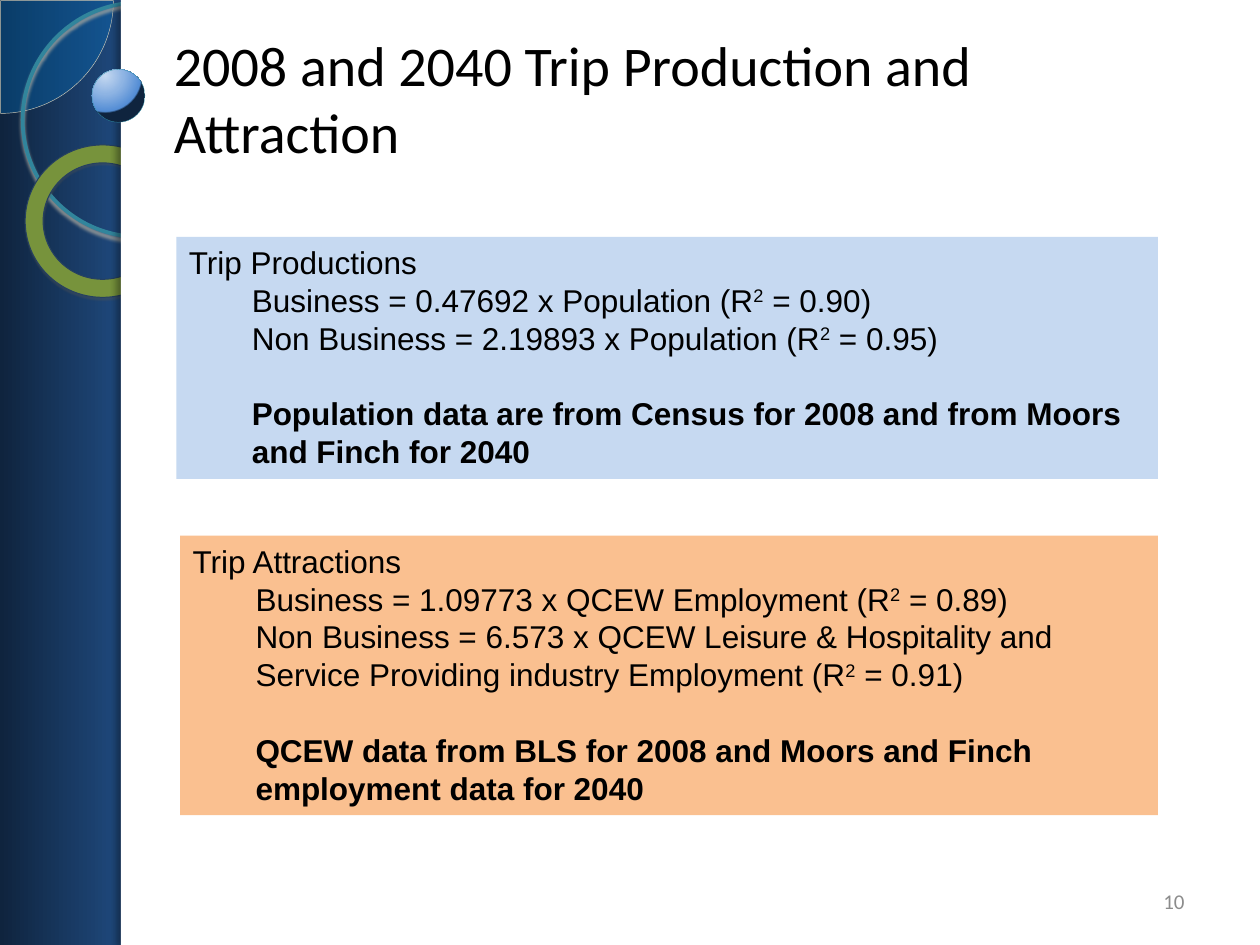
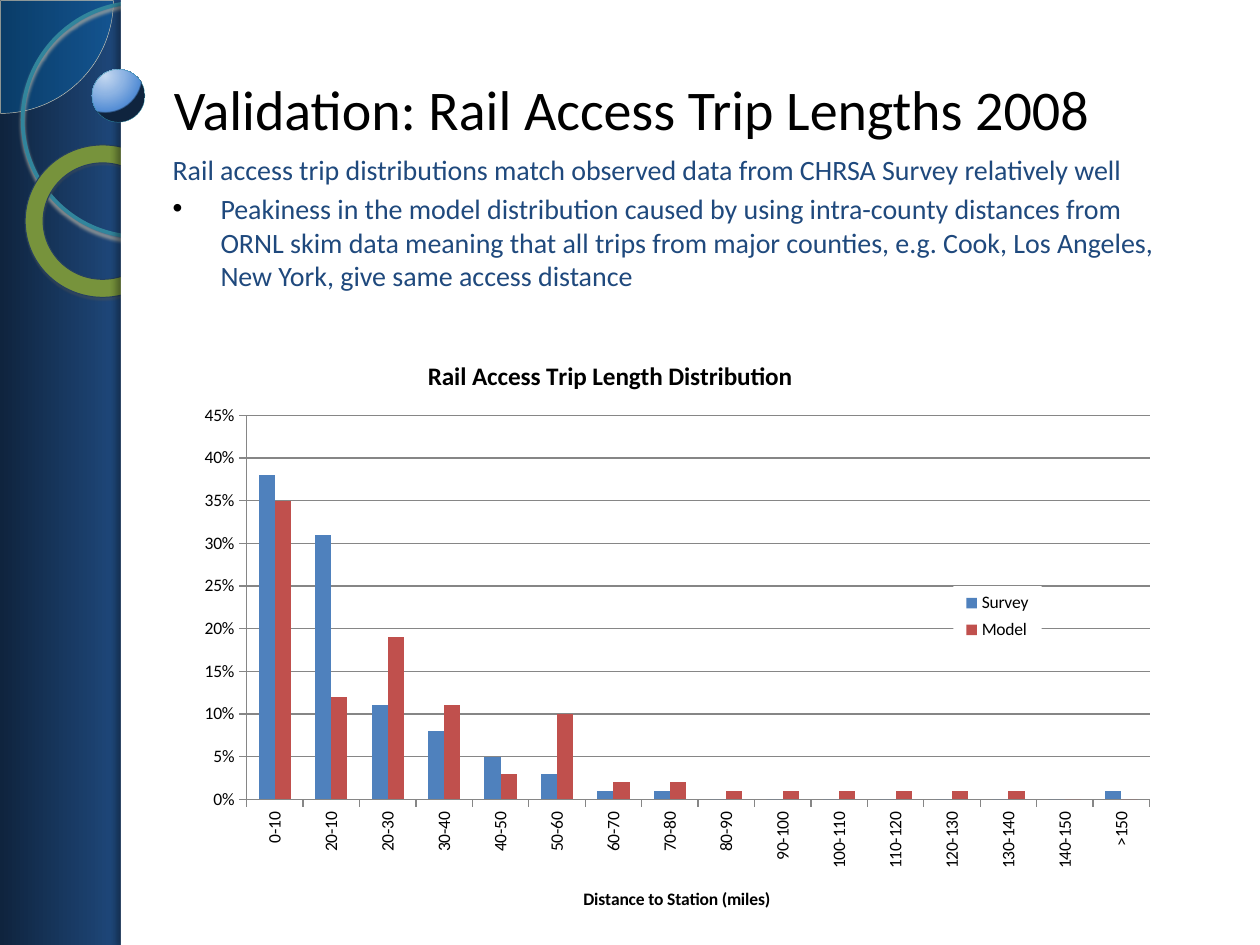
from lxml.etree import SubElement
from pptx import Presentation
from pptx.chart.data import CategoryChartData
from pptx.dml.color import RGBColor
from pptx.enum.chart import XL_CHART_TYPE as ChartType, XL_LEGEND_POSITION as LegendSide
from pptx.enum.chart import XL_TICK_MARK as Tick
from pptx.enum.shapes import MSO_SHAPE as Preset
from pptx.enum.text import MSO_ANCHOR as Anchor, MSO_AUTO_SIZE as AutoSize, PP_ALIGN as Align
from pptx.oxml import parse_xml
from pptx.oxml.ns import nsdecls, qn
from pptx.util import Inches, Pt

SLIDE_WIDTH, SLIDE_HEIGHT = Inches(10), Inches(7.5)
COLUMN, ROW = SLIDE_WIDTH / 100, SLIDE_HEIGHT / 75
BLACK, WHITE, NAVY, DARK_NAVY = "000000", "FFFFFF", "1F497D", "0F243E"
PALE_BLUE, ORANGE, GRAY, GRID_GRAY = "C6D9F1", "FAC090", "8C8C8C", "868686"
TITLE_FORMAT = {"name": "Calibri", "size": Pt(32), "color": BLACK}
BODY_FORMAT = {"name": "Calibri", "size": Pt(16), "color": NAVY}
NUMBER_FORMAT = {"name": "Calibri", "size": Pt(12), "color": GRAY}
MODEL_FORMAT = {"name": "Arial", "size": Pt(18), "color": BLACK}
CHART_FORMAT = {"name": "Calibri", "size": Pt(10), "color": BLACK}
MODEL_PITCH = Pt(21.6)

DISTANCES = [
    "0-10", "20-10", "20-30", "30-40", "40-50", "50-60", "60-70", "70-80",
    "80-90", "90-100", "100-110", "110-120", "120-130", "130-140", "140-150", ">150",
]
TRIP_SHARES = {
    "Survey": ("4F81BD", [0.38, 0.31, 0.11, 0.08, 0.05, 0.03, 0.01, 0.01,
                          0, 0, 0, 0, 0, 0, 0, 0.01]),
    "Model": ("C0504D", [0.35, 0.12, 0.19, 0.11, 0.03, 0.1, 0.02, 0.02,
                         0.01, 0.01, 0.01, 0.01, 0.01, 0.01, 0, 0]),
}


def color(hex_text):
    return RGBColor.from_string(hex_text)


def grid(column, row, columns, rows):
    return [round(value) for value in
            (column * COLUMN, row * ROW, columns * COLUMN, rows * ROW)]


def set_values(target, values):
    for name, value in values.items():
        setattr(target, name, value)


def format_font(font, values):
    for name, value in values.items():
        if name == "color":
            font.color.rgb = color(value)
        else:
            setattr(font, name, value)


def move(shape, cells):
    set_values(shape, dict(zip(("left", "top", "width", "height"), grid(*cells))))


def set_fill(fill, hex_text):
    fill.solid()
    fill.fore_color.rgb = color(hex_text)


def add_span(para, text, values):
    span = para.add_run()
    span.text = text
    format_font(span.font, values)
    return span


def add_box(slide, preset, cells, fill=None, line=None, shadow=None):
    box = slide.shapes.add_shape(preset, *grid(*cells))
    box.shadow.inherit = False
    if fill:
        set_fill(box.fill, fill)
    else:
        box.fill.background()
    if line:
        box.line.color.rgb = color(line[0])
        box.line.width = Pt(line[1])
    else:
        box.line.fill.background()
    if shadow:
        add_shadow(box, *shadow)
    return box


def add_shadow(box, hex_text, alpha, blur, distance, angle):
    effects = box.element.spPr.find(qn("a:effectLst"))
    outer = SubElement(effects, qn("a:outerShdw"), blurRad=str(Pt(blur)),
                       dist=str(Pt(distance)), dir=str(angle * 60000),
                       algn="ctr", rotWithShape="0")
    tint = SubElement(outer, qn("a:srgbClr"), val=hex_text)
    SubElement(tint, qn("a:alpha"), val=str(alpha * 1000))


def set_gradient(box, stops, direction):
    colors = "".join(f'<a:gs pos="{position * 1000}"><a:srgbClr val="{hex_text}"/></a:gs>'
                     for position, hex_text in stops)
    gradient = parse_xml(f'<a:gradFill {nsdecls("a")} rotWithShape="1">'
                         f'<a:gsLst>{colors}</a:gsLst>{direction}</a:gradFill>')
    properties = box.element.spPr
    properties.replace(properties.find(qn("a:noFill")), gradient)


def add_master_art(deck, slide):
    band = add_box(slide, Preset.RECTANGLE, (0, 0, 9.7, 75))
    set_gradient(band, [(0, DARK_NAVY), (100, NAVY)], '<a:lin ang="0" scaled="0"/>')

    quarter = add_box(slide, Preset.PIE, (-8.9, -8.9, 17.9, 17.9), "0070C0", ("D1CEBB", 0.25))
    quarter.adjustments[0], quarter.adjustments[1] = 0, 54
    tint = quarter.element.spPr.find(qn("a:solidFill"))[0]
    SubElement(tint, qn("a:alpha"), val="33000")

    circle = add_box(slide, Preset.OVAL, (1.8, 0.2, 18.6, 18.6), line=("31859C", 2.15),
                     shadow=("B2B0A4", 85, 2, 2, 90))
    ring = add_box(slide, Preset.DONUT, (2, 11.5, 12.3, 12.1), "77933C", ("254061", 0.58),
                   ("5A5850", 35, 1, 1.2, 75))
    ring.adjustments[0] = 0.118
    panel = add_box(slide, Preset.RECTANGLE, (9.6, 0, 90.4, 75), WHITE,
                    shadow=(BLACK, 40, 4, 3, 135))
    ball = add_box(slide, Preset.OVAL, (7.3, 5.5, 4.2, 4.2), line=("308EA5", 0.16))
    set_gradient(ball, [(0, PALE_BLUE), (50, "8EB4E3"), (95, "558ED5"), (100, DARK_NAVY)],
                 '<a:path path="circle"><a:fillToRect l="25000" t="12000" '
                 'r="75000" b="88000"/></a:path>')

    tree = deck.slide_master.shapes.element
    for order, part in enumerate((band, quarter, circle, ring, panel, ball)):
        part.element.xpath(".//p:cNvPr")[0].set("id", str(100 + order))
        tree.insert(2 + order, part.element)


def add_title(slide, text, row):
    title = slide.shapes.title
    move(title, (12.8, row, 83.7, 15.5))
    title.text_frame.auto_size = AutoSize.NONE
    para = title.text_frame.paragraphs[0]
    para.alignment = Align.LEFT
    add_span(para, text, TITLE_FORMAT)


def add_page_number(slide, text):
    box = slide.shapes.add_textbox(*grid(71.7, 69.5, 23.3, 4))
    set_values(box.text_frame, {"word_wrap": True, "vertical_anchor": Anchor.MIDDLE})
    para = box.text_frame.paragraphs[0]
    para.alignment = Align.RIGHT
    add_span(para, text, NUMBER_FORMAT)


def add_model_para(frame, level=1):
    para = frame.add_paragraph() if level else frame.paragraphs[0]
    set_values(para, {"alignment": Align.LEFT, "level": level, "line_spacing": MODEL_PITCH})
    para._p.get_or_add_pPr().set("marL", str(Inches(0.5) * level))
    return para


def add_model_box(slide, cells, fill, heading, equations, data_note):
    box = add_box(slide, Preset.RECTANGLE, cells, fill)
    frame = box.text_frame
    set_values(frame, {"word_wrap": True, "vertical_anchor": Anchor.TOP})
    add_span(add_model_para(frame, 0), heading, MODEL_FORMAT)
    for equation, fit in equations:
        para = add_model_para(frame)
        add_span(para, f"{equation} (R", MODEL_FORMAT)
        square = add_span(para, "2", MODEL_FORMAT)
        square._r.get_or_add_rPr().set("baseline", "30000")
        add_span(para, f" = {fit})", MODEL_FORMAT)
    note = add_model_para(frame)
    note.space_before = MODEL_PITCH
    add_span(note, data_note, {**MODEL_FORMAT, "bold": True})


def add_findings(slide, lead, bullet):
    body = slide.placeholders[1]
    move(body, (12.7, 11.6, 81.9, 13.6))
    frame = body.text_frame
    frame.auto_size = AutoSize.NONE
    for para, text, indent in ((frame.paragraphs[0], lead, 0),
                               (frame.add_paragraph(), bullet, Inches(0.38))):
        add_span(para, text, BODY_FORMAT)
        properties = para._p.get_or_add_pPr()
        properties.set("marL", str(indent))
        properties.set("indent", str(-indent))
        if indent:
            SubElement(SubElement(properties, qn("a:buClr")), qn("a:srgbClr"), val=BLACK)
            SubElement(properties, qn("a:buFont"), typeface="Arial")
            SubElement(properties, qn("a:buChar"), char="•")
        else:
            SubElement(properties, qn("a:buNone"))


def set_layout(element, **shares):
    for layout in element.findall(qn("c:layout")):
        element.remove(layout)
    inner = '<c:layoutTarget val="inner"/>' if element.tag == qn("c:plotArea") else ""
    modes = "".join(f'<c:{axis}Mode val="edge"/>' for axis in "xy")
    sizes = "".join(f'<c:{name} val="{share}"/>' for name, share in shares.items())
    layout = parse_xml(f'<c:layout {nsdecls("c")}><c:manualLayout>{inner}{modes}{sizes}'
                       '</c:manualLayout></c:layout>')
    overlay = element.find(qn("c:overlay"))
    if overlay is None:
        element.insert(0, layout)
    else:
        overlay.addprevious(layout)


def set_chart_title(title, text, size, x, y):
    para = title.text_frame.paragraphs[0]
    add_span(para, text, {**CHART_FORMAT, "size": Pt(size), "bold": True})
    set_layout(title.element, x=x, y=y)


def format_axis(axis):
    set_values(axis, {"major_tick_mark": Tick.OUTSIDE, "minor_tick_mark": Tick.NONE})
    axis.format.line.color.rgb = color(GRID_GRAY)
    format_font(axis.tick_labels.font, CHART_FORMAT)


def add_legend(chart):
    chart.has_legend = True
    set_values(chart.legend, {"position": LegendSide.RIGHT, "include_in_layout": True})
    format_font(chart.legend.font, CHART_FORMAT)
    legend = chart.element.xpath("c:chart/c:legend")[0]
    set_layout(legend, x=0.78, y=0.43, w=0.09, h=0.1)
    legend.find(qn("c:overlay")).addnext(parse_xml(
        f'<c:spPr {nsdecls("c", "a")}><a:solidFill><a:srgbClr val="{WHITE}"/>'
        '</a:solidFill></c:spPr>'))


def add_distance_chart(slide):
    data = CategoryChartData(number_format="0%")
    data.categories = DISTANCES
    for name, (_, shares) in TRIP_SHARES.items():
        data.add_series(name, shares)
    chart = slide.shapes.add_chart(ChartType.COLUMN_CLUSTERED,
                                   *grid(14.9, 25.7, 77.9, 48.4), data).chart
    format_font(chart.font, CHART_FORMAT)
    set_chart_title(chart.chart_title, "Rail Access Trip Length Distribution", 14.4, 0.24, 0.05)

    plot = chart.plots[0]
    set_values(plot, {"gap_width": 150, "overlap": 0, "vary_by_categories": False})
    for series, (fill, _) in zip(plot.series, TRIP_SHARES.values()):
        set_fill(series.format.fill, fill)

    miles, share = chart.category_axis, chart.value_axis
    for axis in (miles, share):
        format_axis(axis)
    set_chart_title(miles.axis_title, "Distance to Station (miles)", 10, 0.4, 0.92)
    chart.element.xpath(".//c:catAx/c:txPr/a:bodyPr")[0].set("rot", "-5400000")
    set_values(share, {"minimum_scale": 0, "maximum_scale": 0.45, "major_unit": 0.05,
                       "has_major_gridlines": True})
    share.major_gridlines.format.line.color.rgb = color(GRID_GRAY)
    set_values(share.tick_labels, {"number_format": "0%", "number_format_is_linked": False})
    set_layout(chart.element.xpath("c:chart/c:plotArea")[0], x=0.06, y=0.15, w=0.92, h=0.63)
    add_legend(chart)


def main():
    deck = Presentation()
    set_values(deck, {"slide_width": SLIDE_WIDTH, "slide_height": SLIDE_HEIGHT})

    trips = deck.slides.add_slide(deck.slide_layouts[5])
    add_master_art(deck, trips)
    add_title(trips, "2008 and 2040 Trip Production and Attraction", 0)
    add_page_number(trips, "10")
    add_model_box(trips, (14, 18.8, 77.9, 19.2), PALE_BLUE, "Trip Productions", [
        ("Business = 0.47692 x Population", "0.90"),
        ("Non Business = 2.19893 x Population", "0.95"),
    ], "Population data are from Census for 2008 and from Moors and Finch for 2040")
    add_model_box(trips, (14.3, 42.5, 77.6, 22.2), ORANGE, "Trip Attractions", [
        ("Business = 1.09773 x QCEW Employment", "0.89"),
        ("Non Business = 6.573 x QCEW Leisure & Hospitality and "
         "Service Providing industry Employment", "0.91"),
    ], "QCEW data from BLS for 2008 and Moors and Finch employment data for 2040")

    validation = deck.slides.add_slide(deck.slide_layouts[1])
    add_title(validation, "Validation: Rail Access Trip Lengths 2008", 0.8)
    add_findings(
        validation,
        "Rail access trip distributions match observed data from CHRSA Survey relatively well",
        "Peakiness in the model distribution caused by using intra-county distances from "
        "ORNL skim data meaning that all trips from major counties, e.g. Cook, Los Angeles, "
        "New York, give same access distance")
    add_distance_chart(validation)
    deck.save("out.pptx")


if __name__ == "__main__":
    main()
